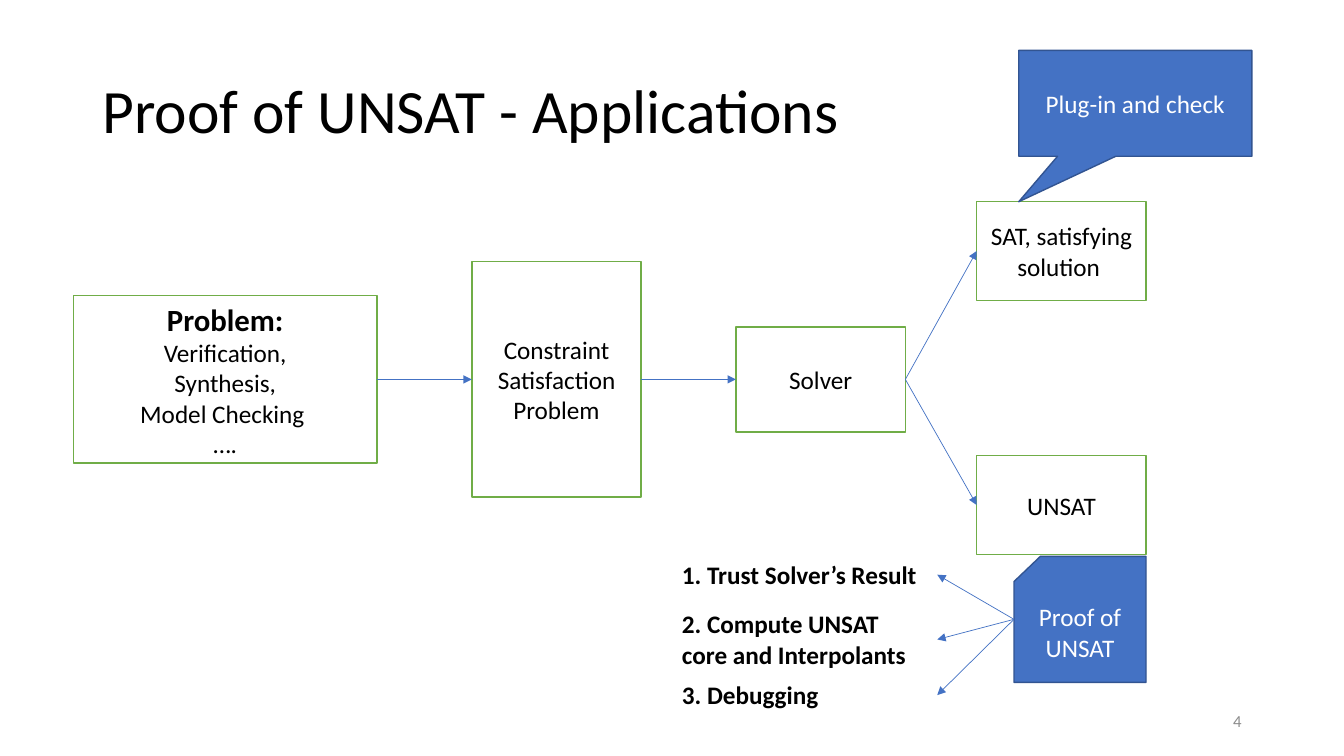
"""Build the slide on applications of a proof of UNSAT."""
from pptx import Presentation
from pptx.dml.color import RGBColor
from pptx.enum.shapes import MSO_CONNECTOR, MSO_SHAPE
from pptx.enum.text import MSO_ANCHOR, MSO_AUTO_SIZE, PP_ALIGN
from pptx.oxml.ns import qn
from pptx.util import Pt
from lxml.etree import SubElement

BLACK = RGBColor(0x00, 0x00, 0x00)
WHITE = RGBColor(0xFF, 0xFF, 0xFF)
GREEN = RGBColor(0x70, 0xAD, 0x47)
BLUE = RGBColor(0x44, 0x72, 0xC4)
NAVY = RGBColor(0x32, 0x54, 0x91)
GREY = RGBColor(0x8C, 0x8C, 0x8C)

LEFT, RIGHT = 1, 3


def write(frame, lines, size=18, color=BLACK, bold=False, align=PP_ALIGN.LEFT):
    frame.word_wrap = True
    frame.text = "\n".join(lines)
    for para in frame.paragraphs:
        para.alignment = align
        font = para.font
        font.name, font.size, font.bold = "Calibri", Pt(size), bold
        font.color.rgb = color


def add_title(slide, text):
    title = slide.shapes.title
    title.left, title.top = Pt(66), Pt(28.75)
    title.width, title.height = Pt(828), Pt(104.4)
    write(title.text_frame, [text], 44)
    title.text_frame.vertical_anchor = MSO_ANCHOR.MIDDLE
    title.text_frame.paragraphs[0].line_spacing = 0.9


def add_box(slide, place, lines, kind=MSO_SHAPE.RECTANGLE,
            fill=WHITE, edge=GREEN, color=BLACK):
    box = slide.shapes.add_shape(kind, *map(Pt, place))
    box.shadow.inherit = False
    box.fill.solid()
    box.fill.fore_color.rgb = fill
    box.line.color.rgb = edge
    box.line.width = Pt(1)
    write(box.text_frame, lines, color=color, align=PP_ALIGN.CENTER)
    box.text_frame.vertical_anchor = MSO_ANCHOR.MIDDLE
    return box


def add_label(slide, place, text, **style):
    label = slide.shapes.add_textbox(*map(Pt, place))
    write(label.text_frame, [text], **style)
    return label


def add_arrow(slide, start, end, side, goal):
    arrow = slide.shapes.add_connector(MSO_CONNECTOR.STRAIGHT, 0, 0, 0, 0)
    arrow.begin_connect(start, side)
    arrow.end_connect(end, goal)
    arrow.line.color.rgb = BLUE
    arrow.line.width = Pt(0.5)
    SubElement(arrow.line._get_or_add_ln(), qn("a:tailEnd"), type="triangle")
    SubElement(arrow._element.spPr, qn("a:effectLst"))


def main():
    deck = Presentation()
    deck.slide_width, deck.slide_height = Pt(960), Pt(540)
    slide = deck.slides.add_slide(deck.slide_layouts[5])
    add_title(slide, "Proof of UNSAT - Applications")

    task = add_box(slide, (52.5, 211.2, 216.8, 119.6),
                   ["Problem:", "Verification,", "Synthesis,", "Model Checking ", "…."])
    head = task.text_frame.paragraphs[0].font
    head.size, head.bold = Pt(22), True
    model = add_box(slide, (337, 187, 121, 168), ["Constraint Satisfaction Problem"])
    sat = add_box(slide, (697.7, 144, 121, 70.5), ["SAT, satisfying solution "])
    solver = add_box(slide, (525.7, 233.5, 121, 75), ["Solver"])
    unsat = add_box(slide, (697.7, 325.5, 121, 70.5), ["UNSAT"])
    for start, end in [(task, model), (model, solver), (solver, sat), (solver, unsat)]:
        add_arrow(slide, start, end, RIGHT, LEFT)

    blue = dict(fill=BLUE, edge=NAVY, color=WHITE)
    check = add_box(slide, (727.7, 36, 166.5, 75.6), ["Plug-in and check"],
                    MSO_SHAPE.RECTANGULAR_CALLOUT, **blue)
    check.adjustments[0], check.adjustments[1] = -0.5, 0.93
    proof = add_box(slide, (724.3, 397.4, 94.3, 90), ["Proof of UNSAT"],
                    MSO_SHAPE.FLOWCHART_CARD, **blue)

    uses = [
        (396, 29, "1. Trust Solver’s Result"),
        (431.3, 51, "2. Compute UNSAT core and Interpolants"),
        (482, 29, "3. Debugging"),
    ]
    for top, height, text in uses:
        label = add_label(slide, (480, top, 189.5, height), text, bold=True)
        label.text_frame.auto_size = MSO_AUTO_SIZE.SHAPE_TO_FIT_TEXT
        add_arrow(slide, proof, label, LEFT, RIGHT)

    page = add_label(slide, (678, 500.5, 216, 28.75), "4",
                     size=12, color=GREY, align=PP_ALIGN.RIGHT)
    page.text_frame.vertical_anchor = MSO_ANCHOR.MIDDLE
    deck.save("out.pptx")


if __name__ == "__main__":
    main()
